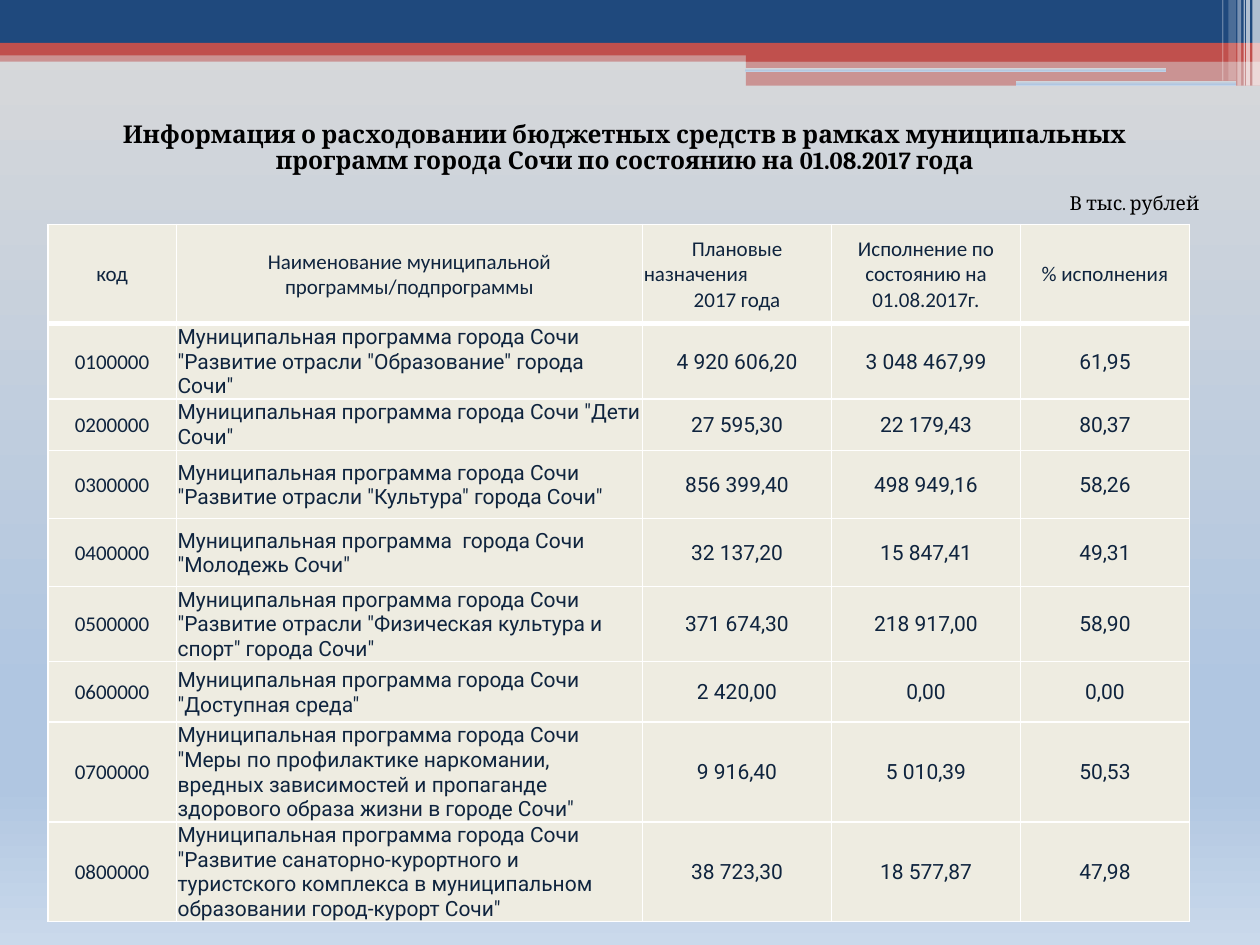
from lxml import etree
from pptx import Presentation
from pptx import util as u
from pptx.dml.color import RGBColor
from pptx.enum import shapes, text
from pptx.oxml.ns import qn

TITLE = ("Информация о расходовании бюджетных средств в рамках муниципальных "
         "программ города Сочи по состоянию на 01.08.2017 года")
HEADERS = ["код", "Наименование муниципальной программы/подпрограммы",
           "Плановые\nназначения\n2017 года",
           "Исполнение по состоянию на 01.08.2017г.", "% исполнения"]
PROGRAMS = [
    ("0100000", 'Муниципальная программа города Сочи "Развитие отрасли "Образование" города Сочи"',
     "4 920 606,20", "3 048 467,99", "61,95"),
    ("0200000", 'Муниципальная программа города Сочи "Дети Сочи"',
     "27 595,30", "22 179,43", "80,37"),
    ("0300000", 'Муниципальная программа города Сочи "Развитие отрасли "Культура" города Сочи"',
     "856 399,40", "498 949,16", "58,26"),
    ("0400000", 'Муниципальная программа  города Сочи "Молодежь Сочи"',
     "32 137,20", "15 847,41", "49,31"),
    ("0500000", 'Муниципальная программа города Сочи "Развитие отрасли "Физическая культура и спорт" города Сочи"',
     "371 674,30", "218 917,00", "58,90"),
    ("0600000", 'Муниципальная программа города Сочи "Доступная среда"',
     "2 420,00", "0,00", "0,00"),
    ("0700000", 'Муниципальная программа города Сочи "Меры по профилактике наркомании, вредных '
     'зависимостей и пропаганде здорового образа жизни в городе Сочи"',
     "9 916,40", "5 010,39", "50,53"),
    ("0800000", 'Муниципальная программа города Сочи "Развитие санаторно-курортного и туристского '
     'комплекса в муниципальном образовании город-курорт Сочи"',
     "38 723,30", "18 577,87", "47,98"),
]
COLS = [1.02, 3.7, 1.5, 1.5, 1.34]
ROWS = [0.79, 0.59, 0.41, 0.54, 0.54, 0.59, 0.48, 0.79, 0.79]
BANDS = [
    (0, 0.4, 10, 0.09, "C0504D", 50), (0, 0, 10, 0.34, "1F497D", 100),
    (0, 0.34, 10, 0.1, "C0504D", 100), (5.92, 0.39, 4.08, 0.1, "C0504D", 100),
    (5.92, 0.48, 4.08, 0.2, "C0504D", 50),
]
SLOTS = [(5.91, 0.54, 3.35, 0.03), (8.06, 0.64, 1.75, 0.04)]
STRIPES = [(9.94, 0.06, 0.68, 65), (9.89, 0.03, 0.68, 65), (9.87, 0.01, 0.68, 60),
           (9.82, 0.03, 0.68, 40), (9.75, 0.06, 0.64, 20), (9.7, 0.01, 0.64, 30)]
LEFT, CENTER = text.PP_ALIGN.LEFT, text.PP_ALIGN.CENTER
TOP, MIDDLE = text.MSO_ANCHOR.TOP, text.MSO_ANCHOR.MIDDLE


def rgb(value):
    return RGBColor.from_string(value)


def write(tf, content, font="Calibri", size=12, color="000000", bold=False,
          aligns=(LEFT,), spacing=None):
    for i, line in enumerate(content.split("\n")):
        p = tf.paragraphs[0] if i == 0 else tf.add_paragraph()
        p.alignment = aligns[i % len(aligns)]
        p.line_spacing = spacing
        r = p.add_run()
        r.text = line
        r.font.name, r.font.size, r.font.bold = font, u.Pt(size), bold
        r.font.color.rgb = rgb(color)


class Deck:
    ink, paper, white = "0F243E", "EEECE1", "FFFFFF"
    stops = [(0, "D9D9D9"), (74, "B0C6E1"), (83, "B0C6E1"), (100, "CAD9EB")]

    def __init__(self):
        self.prs = Presentation()
        self.prs.slide_width, self.prs.slide_height = u.Inches(10), u.Inches(7.5)
        self.s = self.prs.slides.add_slide(self.prs.slide_layouts[5])
        self.gradient(self.s.background.fill, self.s._element)

    def gradient(self, fill, element):
        fill.gradient()
        fill.gradient_angle = 270
        stops = next(element.iter(qn("a:gsLst")))
        for stop in list(stops):
            stops.remove(stop)
        for pos, color in self.stops:
            stop = etree.SubElement(stops, qn("a:gs"), pos=str(pos * 1000))
            etree.SubElement(stop, qn("a:srgbClr"), val=color)

    def shape(self, kind, x, y, w, h):
        sp = self.s.shapes.add_shape(kind, *map(u.Inches, (x, y, w, h)))
        sp.shadow.inherit = False
        sp.line.fill.background()
        return sp

    def band(self, x, y, w, h, color, opacity):
        sp = self.shape(shapes.MSO_SHAPE.RECTANGLE, x, y, w, h)
        sp.fill.solid()
        sp.fill.fore_color.rgb = rgb(color)
        if opacity < 100:
            clr = next(sp._element.spPr.iter(qn("a:srgbClr")))
            etree.SubElement(clr, qn("a:alpha"), val=str(opacity * 1000))

    def slot(self, x, y, w, h):
        sp = self.shape(shapes.MSO_SHAPE.ROUNDED_RECTANGLE, x, y, w, h)
        self.gradient(sp.fill, sp._element)

    def title(self, content, x, y, w, h):
        sp = self.s.shapes.title
        sp.left, sp.top, sp.width, sp.height = map(u.Inches, (x, y, w, h))
        tf = sp.text_frame
        tf.auto_size = text.MSO_AUTO_SIZE.NONE
        tf.vertical_anchor = TOP
        write(tf, content, font="Cambria", size=14, bold=True, aligns=(CENTER,), spacing=0.9)

    def caption(self, content, x, y, w, h):
        tf = self.s.shapes.add_textbox(*map(u.Inches, (x, y, w, h))).text_frame
        tf.word_wrap = True
        write(tf, content, font="Cambria", size=11, spacing=0.9)

    def borders(self, cell, **widths):
        tcPr = cell._tc.get_or_add_tcPr()
        for side in "LRTB":
            ln = etree.SubElement(tcPr, qn("a:ln" + side), w=str(u.Pt(widths.get(side, 1))))
            fill = etree.SubElement(ln, qn("a:solidFill"))
            etree.SubElement(fill, qn("a:srgbClr"), val=self.white)

    def cell(self, cell, content, anchor=MIDDLE, edges=None, **fmt):
        self.borders(cell, **(edges or {}))
        cell.fill.solid()
        cell.fill.fore_color.rgb = rgb(self.paper)
        cell.margin_left = cell.margin_right = cell.margin_top = u.Inches(0.01)
        cell.margin_bottom = 0
        cell.vertical_anchor = anchor
        write(cell.text_frame, content, color=self.ink, **fmt)

    def table(self, x, y, cols, rows, headers, records):
        frame = self.s.shapes.add_table(len(rows), len(cols), *map(
            u.Inches, (x, y, sum(cols), sum(rows))))
        table = frame.table
        table.first_row = table.horz_banding = False
        for column, width in zip(table.columns, cols):
            column.width = u.Inches(width)
        for row, height in zip(table.rows, rows):
            row.height = u.Inches(height)
        for j, header in enumerate(headers):
            self.cell(table.cell(0, j), header, edges={"B": 3}, aligns=(CENTER, LEFT, CENTER))
        for i, record in enumerate(records, 1):
            for j, value in enumerate(record):
                self.cell(table.cell(i, j), value,
                          anchor=TOP if (i, j) == (2, 1) else MIDDLE,
                          edges={"T": 3} if i == 1 else None,
                          font="Roboto" if j else "Calibri",
                          aligns=(LEFT if j == 1 else CENTER,))


def main():
    deck = Deck()
    for band in BANDS:
        deck.band(*band)
    for slot in SLOTS:
        deck.slot(*slot)
    for x, w, h, opacity in STRIPES:
        deck.band(x, 0, w, h, deck.white, opacity)
    deck.table(0.38, 1.78, COLS, ROWS, HEADERS, PROGRAMS)
    deck.title(TITLE, 0.51, 0.92, 8.9, 0.57)
    deck.caption("В тыс. рублей", 8.39, 1.49, 1.57, 0.29)
    deck.prs.save("out.pptx")


if __name__ == "__main__":
    main()
